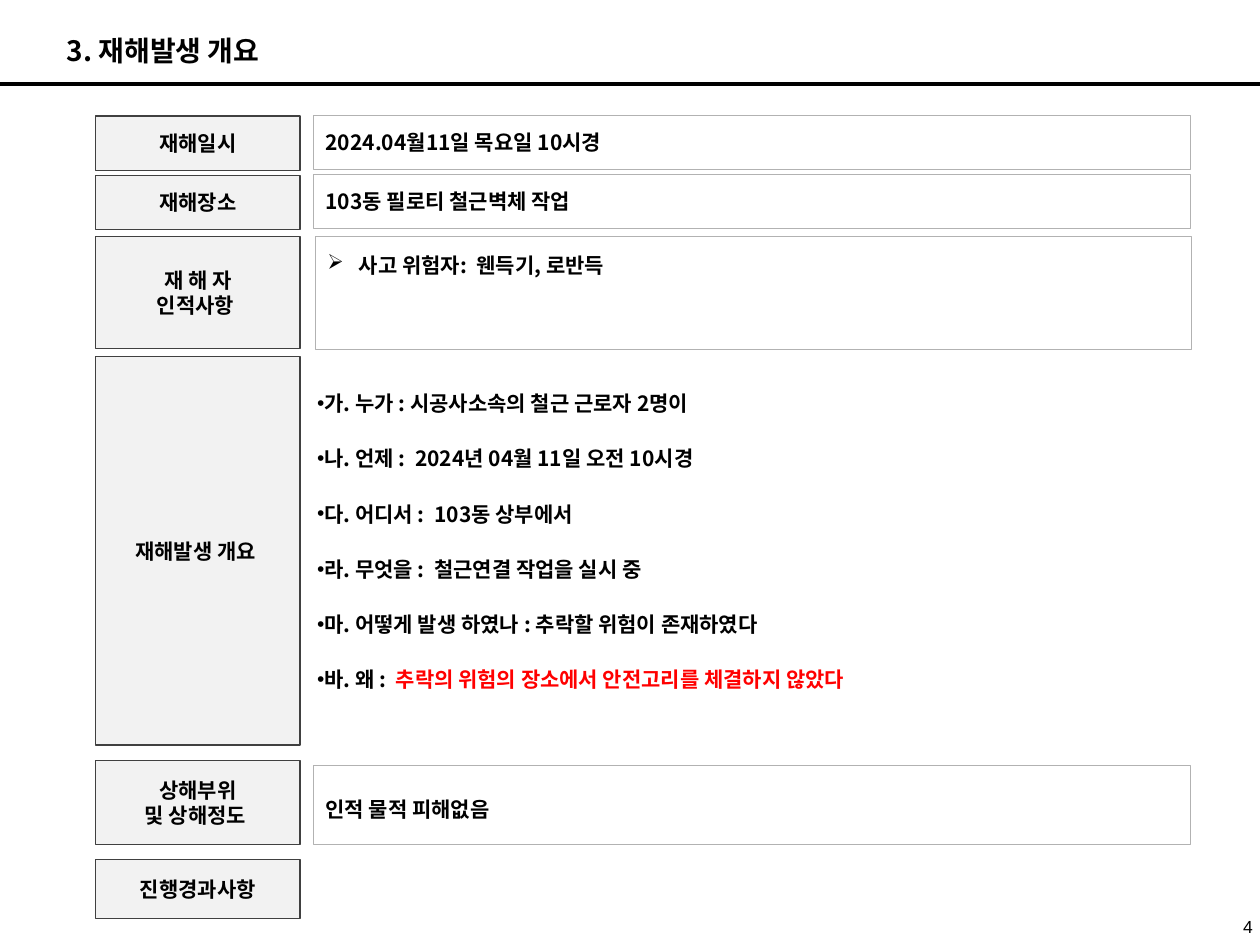
from collections import namedtuple

from lxml import etree
from pptx import Presentation
from pptx.dml.color import RGBColor
from pptx.enum.shapes import MSO_CONNECTOR as Connector, MSO_SHAPE as Shape
from pptx.enum.text import MSO_ANCHOR as Anchor, MSO_AUTO_SIZE as AutoSize, PP_ALIGN as Align
from pptx.oxml.ns import qn
from pptx.util import Pt

Theme = namedtuple("Theme", "font number_font ink alert white label_fill label_line value_line "
                            "title_size text_size number_size")
theme = Theme("Noto Sans CJK KR", "Arial", "000000", "FF0000", "FFFFFF", "F2F2F2", "404040",
              "B2B2B2", 16, 12, 10)


def write(box, lines, size=theme.text_size, font=theme.font, bold=True, align=Align.LEFT,
          anchor=Anchor.MIDDLE, wrap=True, leading=None, after=0, bullet=None, hang=0):
    """Fill a box with lines; each line is a string or a list of (text, colour) spans."""
    frame = box.text_frame
    frame.word_wrap, frame.auto_size, frame.vertical_anchor = wrap, AutoSize.NONE, anchor
    frame.margin_left = frame.margin_right = Pt(7.2)
    frame.margin_top = frame.margin_bottom = Pt(3.6)
    for index, line in enumerate(lines):
        para = frame.paragraphs[0] if index == 0 else frame.add_paragraph()
        para.alignment = align
        para.line_spacing = Pt(leading or size * 1.2)
        para.space_before, para.space_after = Pt(0), Pt(after)
        for text, color in [(line, theme.ink)] if isinstance(line, str) else line:
            span = para.add_run()
            span.text = text
            span.font.name, span.font.size, span.font.bold = font, Pt(size), bold
            span.font.color.rgb = RGBColor.from_string(color)
            etree.SubElement(span.font._element, qn("a:ea"), typeface=font)
        if bullet:
            props = para._p.get_or_add_pPr()
            props.set("marL", str(Pt(hang)))
            props.set("indent", str(Pt(-hang)))
            etree.SubElement(props, qn("a:buChar"), char=bullet)


def add_panel(left, top, width, height, fill, line, line_width):
    panel = page.shapes.add_shape(Shape.RECTANGLE, Pt(left), Pt(top), Pt(width), Pt(height))
    panel.shadow.inherit = False
    panel.fill.solid()
    panel.fill.fore_color.rgb = RGBColor.from_string(fill)
    panel.line.color.rgb = RGBColor.from_string(line)
    panel.line.width = Pt(line_width)
    return panel


deck = Presentation()
deck.slide_width, deck.slide_height = Pt(720), Pt(540)
page = deck.slides.add_slide(deck.slide_layouts[1])

# Title and the rule below it
title, account = page.shapes.title, page.placeholders[1]
title.left, title.top, title.width, title.height = Pt(31), Pt(15.5), Pt(400), Pt(27)
write(title, ["3. 재해발생 개요"], size=theme.title_size, anchor=Anchor.TOP)

rule = page.shapes.add_connector(Connector.STRAIGHT, Pt(0), Pt(48), Pt(720), Pt(48))
rule.line.color.rgb = RGBColor.from_string(theme.ink)
rule.line.width = Pt(2.25)
etree.SubElement(rule._element.spPr, qn("a:effectLst"))

# Label column: top, height, lines
labels = [
    (66.4, 31, ["재해일시"]),
    (100.3, 31, ["재해장소"]),
    (135, 64, ["재 해 자", "인적사항 "]),
    (203.7, 222, ["재해발생 개요 "]),
    (434.4, 48.2, ["상해부위", "및 상해정도 "]),
    (491, 33.8, ["진행경과사항"]),
]
for top, height, lines in labels:
    label = add_panel(54.7, top, 116.7, height, theme.label_fill, theme.label_line, 0.75)
    write(label, lines, align=Align.CENTER)

# Value column: left, top, height, text, text format
values = [
    (179, 66, 31, "2024.04월11일 목요일 10시경", {}),
    (179, 99.7, 31, "103동 필로티 철근벽체 작업", {}),
    (180, 135, 64.4, "사고 위험자:  웬득기, 로반득",
     dict(anchor=Anchor.TOP, leading=20, bullet="➢", hang=18)),
    (179, 437, 45.6, "인적 물적 피해없음", dict(leading=20)),
]
for left, top, height, text, style in values:
    value = add_panel(left, top, 501, height, theme.white, theme.value_line, 0.25)
    write(value, [text], **style)

# Account of the accident
account.left, account.top, account.width, account.height = Pt(174), Pt(219.5), Pt(500), Pt(200)
write(account, [
    "가. 누가 : 시공사소속의 철근 근로자 2명이",
    "나. 언제 :  2024년 04월 11일 오전 10시경",
    "다. 어디서 :  103동 상부에서",
    "라. 무엇을 :  철근연결 작업을 실시 중",
    "마. 어떻게 발생 하였나 : 추락할 위험이 존재하였다",
    [("바. 왜 :  ", theme.ink),
     ("추락의 위험의 장소에서 안전고리를 체결하지 않았다", theme.alert)],
], anchor=Anchor.TOP, after=17.2, bullet="•")

# Page number
number = page.shapes.add_textbox(Pt(573), Pt(520), Pt(150), Pt(20))
write(number, ["4"], size=theme.number_size, font=theme.number_font, bold=False,
      align=Align.RIGHT, anchor=Anchor.TOP)

deck.save("out.pptx")
